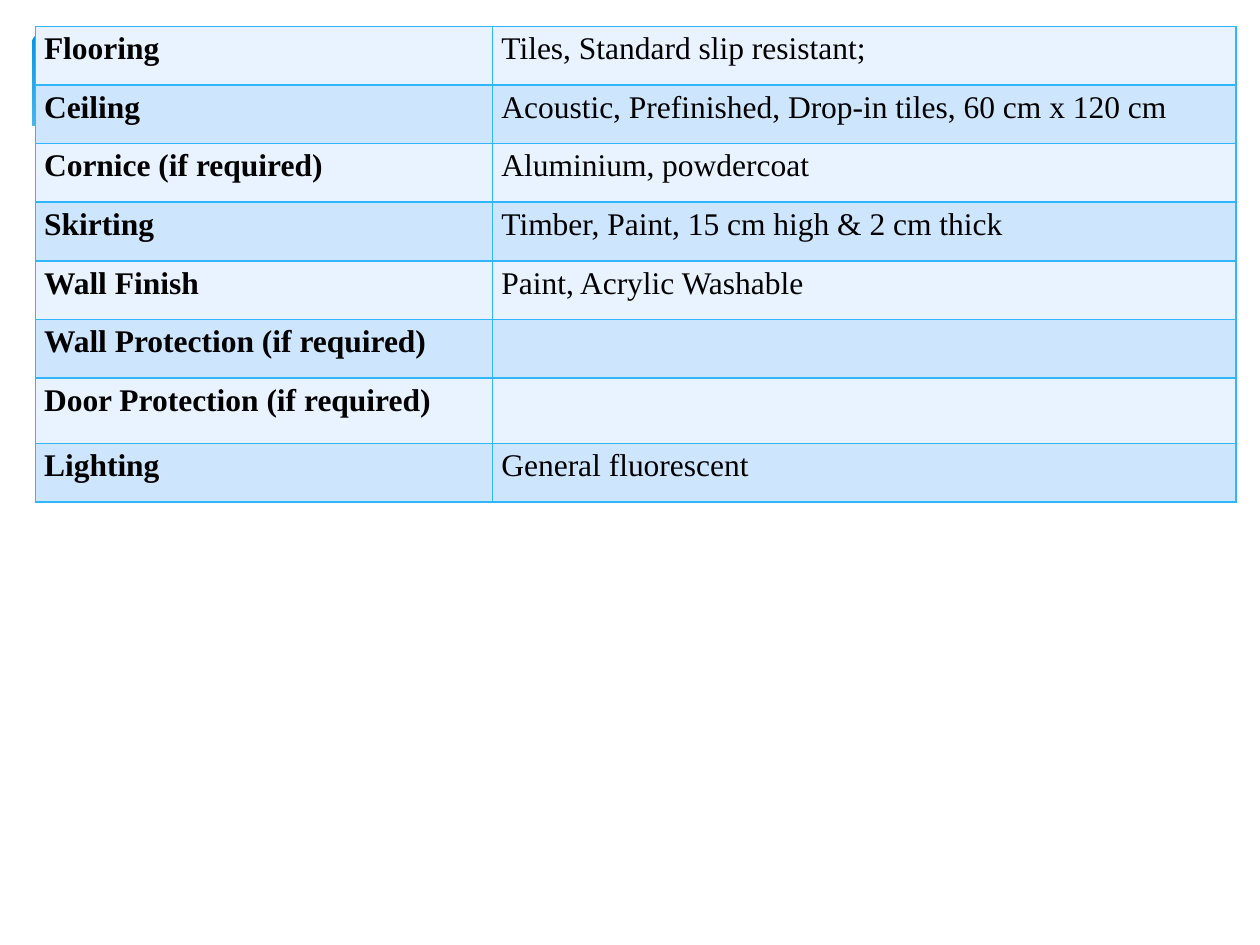
from itertools import product

from lxml import etree
from pptx import Presentation
from pptx import util as u
from pptx.dml.color import RGBColor
from pptx.enum import shapes
from pptx.oxml import ns

FINISHES = [
    ("Flooring", "Tiles, Standard slip resistant;"),
    ("Ceiling", "Acoustic, Prefinished, Drop-in tiles, 60 cm x 120 cm"),
    ("Cornice (if required)", "Aluminium, powdercoat"),
    ("Skirting", "Timber, Paint, 15 cm high & 2 cm thick"),
    ("Wall Finish", "Paint, Acrylic Washable"),
    ("Wall Protection (if required)", ""),
    ("Door Protection (if required)", ""),
    ("Lighting", "General fluorescent"),
]
THEME = {
    "font": "Times New Roman", "size": 18, "text": "000000",
    "bands": ("E8F3FF", "CEE5FE"), "border": "31B6FD", "border_width": 1,
    "banner": ((0, "0293E0"), (0.9, "83D3FE")), "wave": "FFFFFF",
}
SLIDE = (10, 7.5)
BANNER = (0.25, 0.25, 9.51, 1.56)
WAVE = [
    (9.77, 1.41), (9.2, 1.59), (8.5, 1.7), (7.78, 1.7), (6.88, 1.62),
    (6.03, 1.49), (5.03, 1.28), (4.18, 1.07), (3.4, 0.92), (2.71, 0.82),
    (1.93, 0.78), (1.32, 0.81), (0.76, 0.89), (0.4, 1), (0.23, 1.07),
    (0.23, 2.24), (9.77, 2.24),
]
TABLE_ORIGIN = (0.28, 0.21)
COLUMNS = (3.63, 5.9)
ROW, TALL_ROW = 0.465, 0.52
TALL_ROWS = {6}


def color(name):
    return RGBColor.from_string(name)


def apply(target, values):
    for name, value in values.items():
        setattr(target, name, value)


def add_banner(slide):
    banner = slide.shapes.add_shape(
        shapes.MSO_SHAPE.ROUNDED_RECTANGLE, *map(u.Inches, BANNER))
    banner.adjustments[0] = 0.07
    banner.fill.gradient()
    banner.fill.gradient_angle = 270
    for stop, (position, name) in zip(banner.fill.gradient_stops, THEME["banner"]):
        apply(stop, {"position": position})
        stop.color.rgb = color(name)
    builder = slide.shapes.build_freeform(*WAVE[0], scale=u.Inches(1))
    builder.add_line_segments(WAVE[1:], close=True)
    wave = builder.convert_to_shape()
    wave.fill.solid()
    wave.fill.fore_color.rgb = color(THEME["wave"])
    for shape in (banner, wave):
        shape.line.fill.background()
        shape.shadow.inherit = False


def add_borders(cell):
    properties = cell._tc.get_or_add_tcPr()
    for side in "LRTB":
        line = etree.SubElement(properties, ns.qn(f"a:ln{side}"),
                                w=str(u.Pt(THEME["border_width"])))
        fill = etree.SubElement(line, ns.qn("a:solidFill"))
        etree.SubElement(fill, ns.qn("a:srgbClr"), val=THEME["border"])


def format_cell(cell, content, band, bold):
    apply(cell, {
        "margin_left": u.Inches(0.07), "margin_right": u.Inches(0.07),
        "margin_top": 0, "margin_bottom": 0,
    })
    add_borders(cell)
    cell.fill.solid()
    cell.fill.fore_color.rgb = color(band)
    paragraph = cell.text_frame.paragraphs[0]
    apply(paragraph, {"line_spacing": 1.15, "space_after": u.Pt(10)})
    if content:
        run = paragraph.add_run()
        run.text = content
        apply(run.font, {
            "name": THEME["font"], "size": u.Pt(THEME["size"]), "bold": bold})
        run.font.color.rgb = color(THEME["text"])


def add_finishes(slide):
    heights = [TALL_ROW if row in TALL_ROWS else ROW for row in range(len(FINISHES))]
    box = (*TABLE_ORIGIN, sum(COLUMNS), sum(heights))
    table = slide.shapes.add_table(
        len(FINISHES), len(COLUMNS), *map(u.Inches, box)).table
    apply(table, {"first_row": False, "horz_banding": False})
    for column, width in zip(table.columns, COLUMNS):
        column.width = u.Inches(width)
    for row, height in zip(table.rows, heights):
        row.height = u.Inches(height)
    for row, column in product(range(len(FINISHES)), range(len(COLUMNS))):
        format_cell(table.cell(row, column), FINISHES[row][column],
                    THEME["bands"][row % 2], bold=column == 0)


def main():
    presentation = Presentation()
    width, height = map(u.Inches, SLIDE)
    apply(presentation, {"slide_width": width, "slide_height": height})
    slide = presentation.slides.add_slide(presentation.slide_layouts[6])
    add_banner(slide)
    add_finishes(slide)
    presentation.save("out.pptx")


if __name__ == "__main__":
    main()
